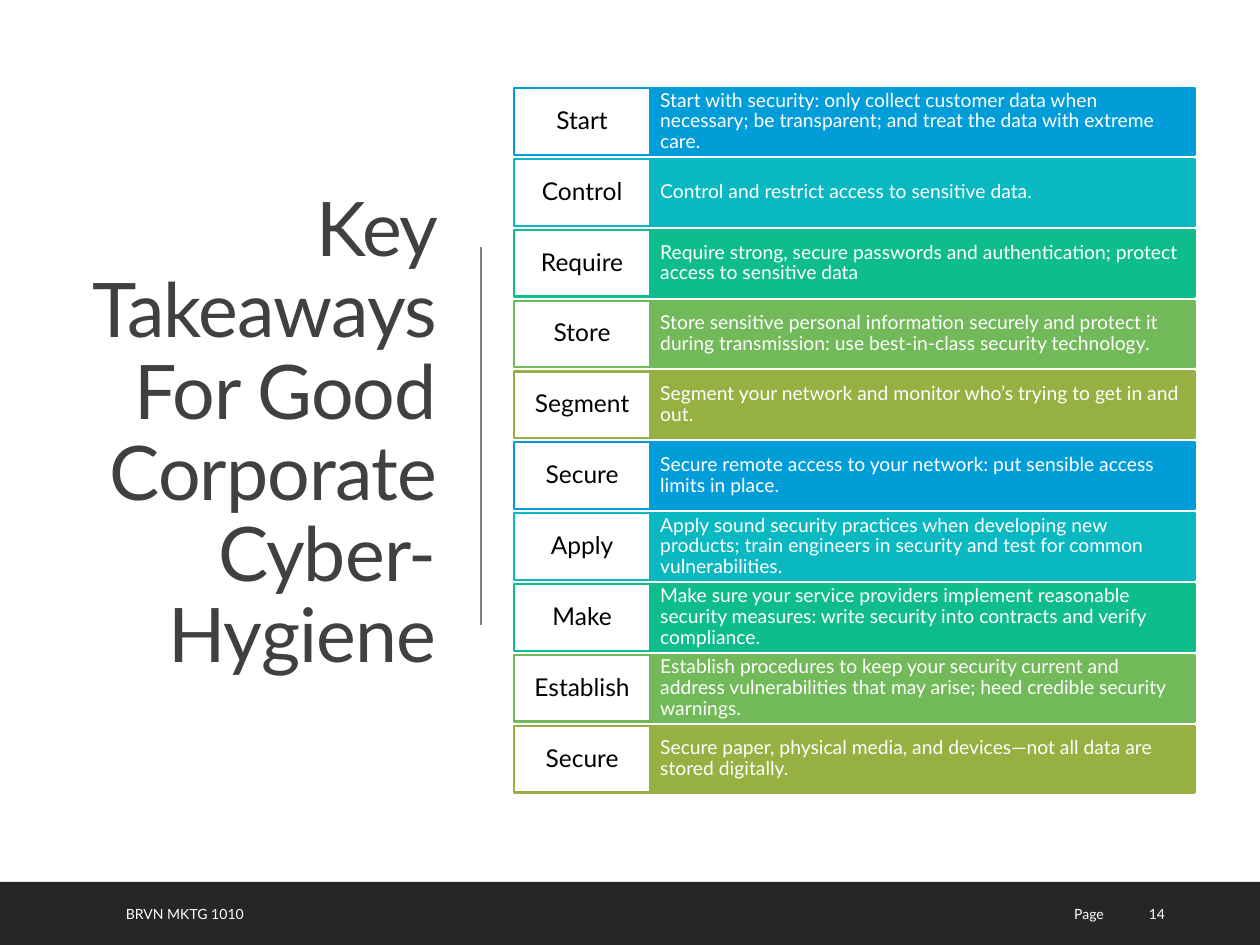
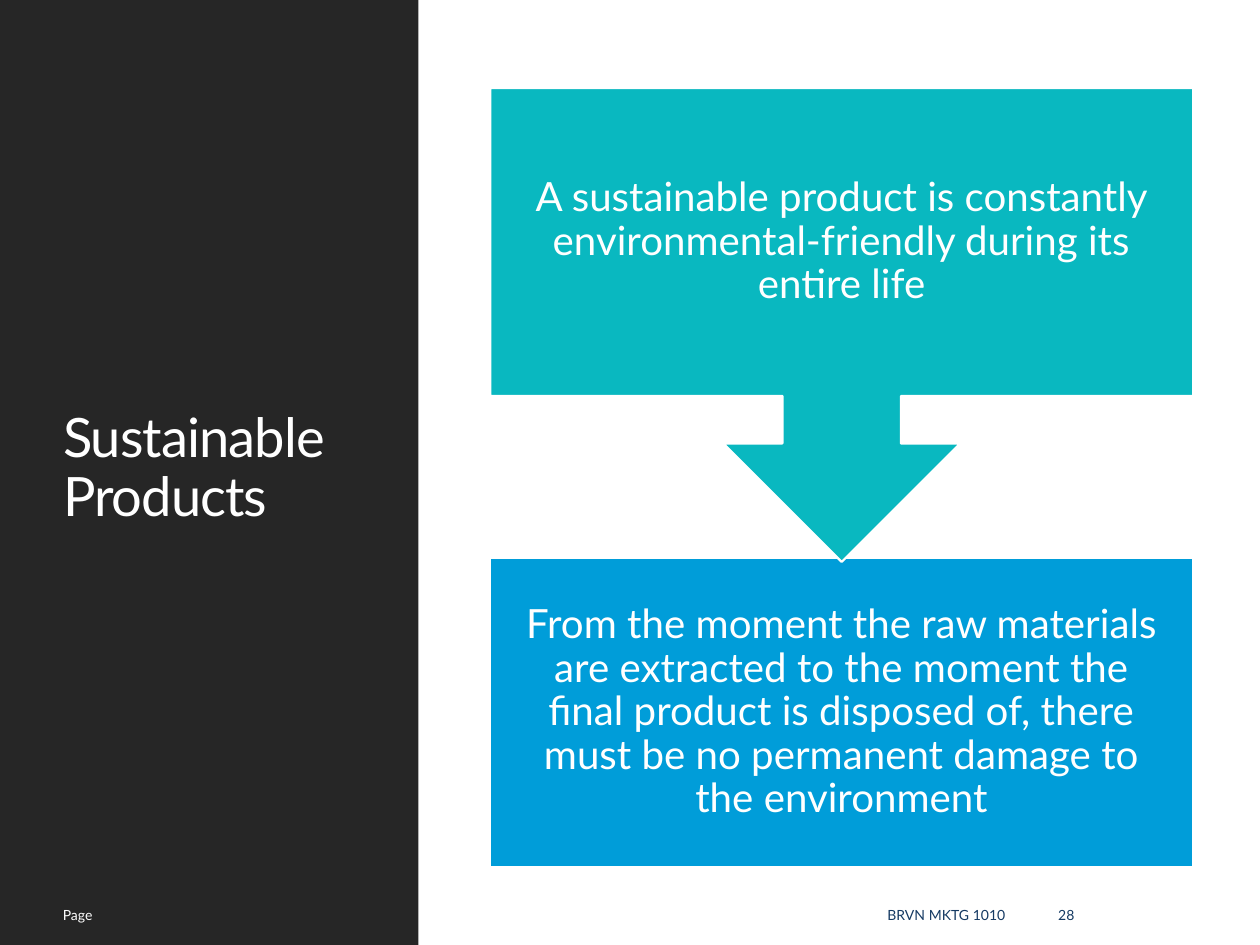
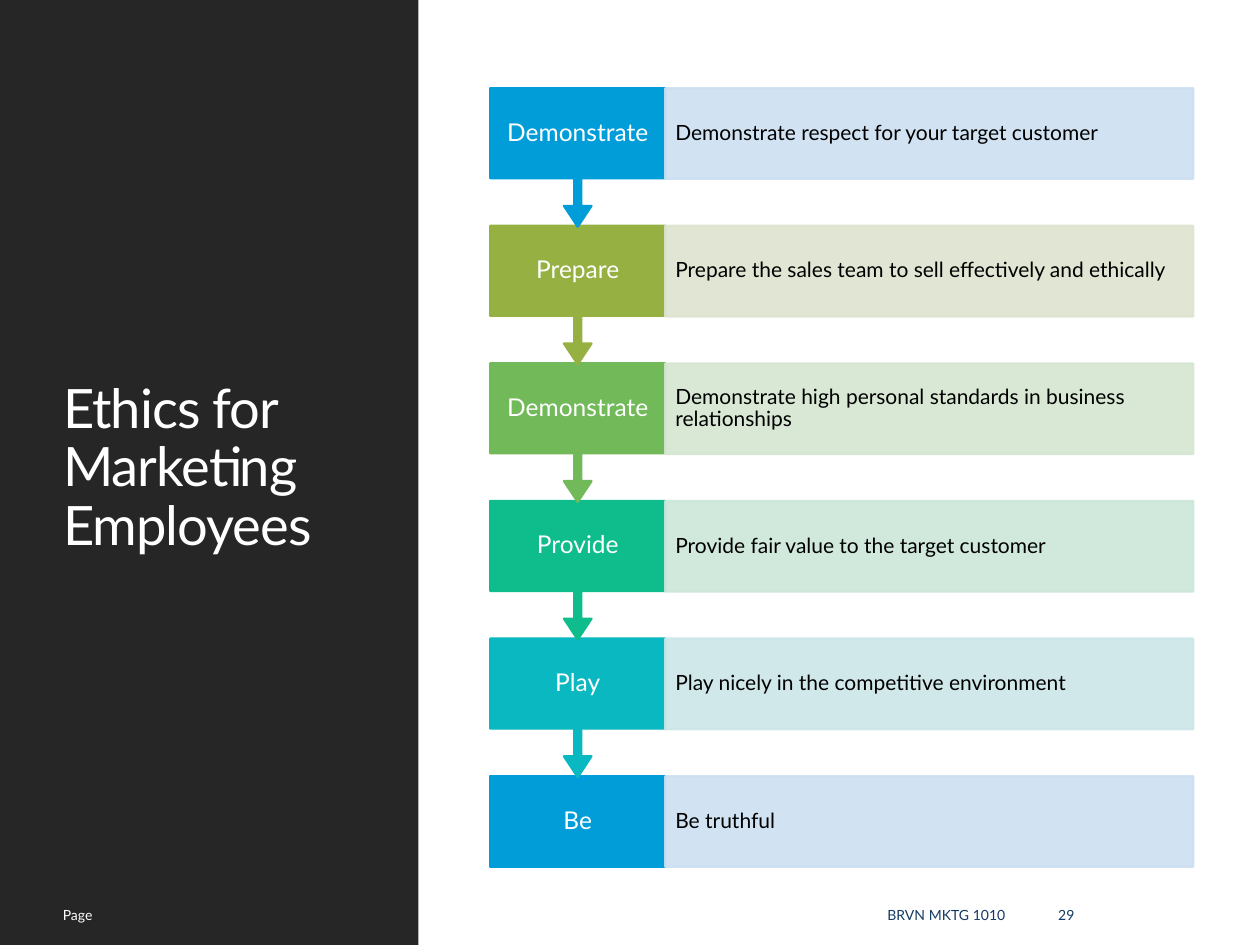
from collections import namedtuple

from lxml import etree
from pptx import Presentation
from pptx.dml.color import RGBColor
from pptx.enum import shapes, text
from pptx.oxml import ns
from pptx.util import Inches, Pt

FONT = "Lato"
COURSE = "BRVN MKTG 1010"

WHITE = RGBColor(0xFF, 0xFF, 0xFF)
BLACK = RGBColor(0x00, 0x00, 0x00)
CHARCOAL = RGBColor(0x26, 0x26, 0x26)
TITLE_GRAY = RGBColor(0x40, 0x40, 0x40)
RULE_GRAY = RGBColor(0x80, 0x80, 0x80)
NAVY = RGBColor(0x15, 0x3A, 0x63)
BLUE = RGBColor(0x00, 0x9D, 0xD9)
TEAL = RGBColor(0x09, 0xB8, 0xC0)
GREEN = RGBColor(0x0E, 0xBC, 0x8C)
LEAF = RGBColor(0x71, 0xB9, 0x59)
OLIVE = RGBColor(0x96, 0xB0, 0x42)

ACCENTS = [BLUE, TEAL, GREEN, LEAF, OLIVE]
TINTS = {
    BLUE: RGBColor(0xCC, 0xDF, 0xF1),
    TEAL: RGBColor(0xCC, 0xE6, 0xE8),
    GREEN: RGBColor(0xCC, 0xE7, 0xDA),
    LEAF: RGBColor(0xD5, 0xE6, 0xD1),
    OLIVE: RGBColor(0xDD, 0xE4, 0xCF),
}

LEFT, CENTER, RIGHT = text.PP_ALIGN.LEFT, text.PP_ALIGN.CENTER, text.PP_ALIGN.RIGHT
RECT = shapes.MSO_SHAPE.RECTANGLE
CALLOUT = shapes.MSO_SHAPE.DOWN_ARROW_CALLOUT

Box = namedtuple("Box", "left top width height")

TAKEAWAYS = [
    ("Start", "Start with security: only collect customer data when necessary; "
              "be transparent; and treat the data with extreme care."),
    ("Control", "Control and restrict access to sensitive data."),
    ("Require", "Require strong, secure passwords and authentication; "
                "protect access to sensitive data"),
    ("Store", "Store sensitive personal information securely and protect it during "
              "transmission: use best-in-class security technology."),
    ("Segment", "Segment your network and monitor who’s trying to get in and out."),
    ("Secure", "Secure remote access to your network: put sensible access limits in place."),
    ("Apply", "Apply sound security practices when developing new products; "
              "train engineers in security and test for common vulnerabilities."),
    ("Make", "Make sure your service providers implement reasonable security measures: "
             "write security into contracts and verify compliance."),
    ("Establish", "Establish procedures to keep your security current and address "
                  "vulnerabilities that may arise; heed credible security warnings."),
    ("Secure", "Secure paper, physical media, and devices—not all data are stored digitally."),
]

SUSTAINABLE = [
    "A sustainable product is constantly environmental-friendly during its entire life",
    "From the moment the raw materials are extracted to the moment the final product "
    "is disposed of, there must be no permanent damage to the environment",
]

ETHICS = [
    ("Demonstrate", "Demonstrate respect for your target customer", BLUE),
    ("Prepare", "Prepare the sales team to sell effectively and ethically", OLIVE),
    ("Demonstrate", "Demonstrate high personal standards in business relationships", LEAF),
    ("Provide", "Provide fair value to the target customer", GREEN),
    ("Play", "Play nicely in the competitive environment", TEAL),
    ("Be", "Be truthful", BLUE),
]


def inches(box):
    return [Inches(length) for length in box]


def write(shape, words, size, color, align=LEFT, spacing=0.9, insets=(0.1, 0.05)):
    """Fill a shape with one formatted paragraph and return its run."""
    frame = shape.text_frame
    across, down = inches(insets)
    frame_format = {
        "word_wrap": True, "auto_size": text.MSO_AUTO_SIZE.NONE,
        "vertical_anchor": text.MSO_ANCHOR.MIDDLE,
        "margin_left": across, "margin_right": across,
        "margin_top": down, "margin_bottom": down,
    }
    for name, value in frame_format.items():
        setattr(frame, name, value)
    para = frame.paragraphs[0]
    para.alignment, para.line_spacing = align, spacing
    span = para.add_run()
    span.text = words
    for name, value in {"name": FONT, "size": Pt(size)}.items():
        setattr(span.font, name, value)
    span.font.color.rgb = color
    return span


def add_block(page, box, fill, line=None, kind=RECT):
    block = page.shapes.add_shape(kind, *inches(box))
    block.shadow.inherit = False
    block.fill.solid()
    block.fill.fore_color.rgb = fill
    if line is None:
        block.line.fill.background()
    else:
        block.line.color.rgb = line
        block.line.width = Pt(1.25)
    return block


def set_opacity(block, percent):
    """Apply an opacity to both the fill and the outline."""
    for color in block.element.spPr.iter(ns.qn("a:srgbClr")):
        etree.SubElement(color, ns.qn("a:alpha"), val=str(percent * 1000))


def add_band(page, box):
    """Draw a dark band behind everything else on the page."""
    band = add_block(page, box, CHARCOAL)
    page.shapes.element.insert(2, band.element)


def add_title(page, words, box, size, color, align=LEFT):
    title = page.shapes.title
    title.left, title.top, title.width, title.height = inches(box)
    write(title, words, size, color, align)
    for properties in title.element.iter(ns.qn("a:rPr")):
        properties.set("spc", "-50")


def add_footer(page, entries):
    for words, box, color, align in entries:
        write(page.shapes.add_textbox(*inches(box)), words, 8, color, align, 1)


def new_page(deck):
    return deck.slides.add_slide(deck.slide_layouts[5])


def add_side_panel_page(deck, title, number):
    page = new_page(deck)
    add_band(page, Box(0, 0, 3.32, 7.5))
    add_title(page, title, Box(0.4, 0.57, 2.53, 6.31), 31, WHITE)
    add_footer(page, [
        ("Page", Box(0.4, 7.06, 1.42, 0.4), WHITE, LEFT),
        (COURSE, Box(3.89, 7.06, 4.19, 0.4), NAVY, RIGHT),
        (number, Box(8.3, 7.06, 0.89, 0.4), NAVY, LEFT),
    ])
    return page


def add_takeaway_rows(page, box, rows):
    label_width, row_height = 1.08, 0.53
    pitch = (box.height - row_height) / (len(rows) - 1)
    for index, (label, detail) in enumerate(rows):
        color = ACCENTS[index % len(ACCENTS)]
        top = box.top + index * pitch
        detail_box = Box(box.left + label_width, top, box.width - label_width, row_height)
        label_box = Box(box.left, top, label_width, row_height)
        write(add_block(page, detail_box, color, color), detail, 11, WHITE,
              insets=(0.08, 0.13))
        write(add_block(page, label_box, WHITE, color), label, 14, BLACK, CENTER,
              insets=(0.06, 0.05))


def add_cause_and_result(page, box, cause, result):
    """Stack a callout above a plain block, its arrow tip touching the block."""
    block_height, callout_height = 2.45, 3.76
    result_box = Box(box.left, box.top + box.height - block_height, box.width, block_height)
    callout_box = Box(box.left, box.top, box.width, callout_height)
    for words, place, fill, kind in ((result, result_box, BLUE, RECT),
                                     (cause, callout_box, TEAL, CALLOUT)):
        block = add_block(page, place, fill, WHITE, kind)
        write(block, words, 23, WHITE, CENTER, insets=(0.18, 0.18))


def add_step_chain(page, box, steps):
    """Stack labelled steps from the last to the first, so arrows lie on top."""
    label_width, step_height, callout_height = 1.39, 0.72, 1.1
    last = len(steps) - 1
    pitch = (box.height - step_height) / last
    for index, (label, detail, color) in reversed(list(enumerate(steps))):
        top = box.top + index * pitch
        kind, height = (RECT, step_height) if index == last else (CALLOUT, callout_height)
        step = add_block(page, Box(box.left, top, label_width, height), color, color, kind)
        if kind == CALLOUT:
            for position, value in enumerate((0.05, 0.1, 0.15, 0.65)):
                step.adjustments[position] = value
        write(step, label, 14, WHITE, CENTER, insets=(0.1, 0.11))
        detail_box = Box(box.left + label_width, top, box.width - label_width, step_height)
        panel = add_block(page, detail_box, TINTS[color], TINTS[color])
        set_opacity(panel, 90)
        write(panel, detail, 12, BLACK, insets=(0.08, 0.17))


def add_rule(page, left, top, bottom):
    rule = page.shapes.add_connector(shapes.MSO_CONNECTOR.STRAIGHT,
                                     *inches((left, top, left, bottom)))
    rule.line.color.rgb = RULE_GRAY
    rule.line.width = Pt(1)
    etree.SubElement(rule.element.spPr, ns.qn("a:effectLst"))


def build_takeaways(deck):
    page = new_page(deck)
    add_band(page, Box(0, 7, 10, 0.5))
    add_title(page, "Key Takeaways For Good Corporate Cyber-Hygiene",
              Box(0.53, 0.69, 3.03, 5.53), 43, TITLE_GRAY, RIGHT)
    add_rule(page, 3.82, 1.96, 4.96)
    add_footer(page, [
        (COURSE, Box(0.9, 7.05, 5.59, 0.4), WHITE, LEFT),
        ("Page", Box(6.74, 7.05, 2.12, 0.4), WHITE, RIGHT),
        ("14", Box(9.02, 7.05, 0.64, 0.4), WHITE, LEFT),
    ])
    add_takeaway_rows(page, Box(4.08, 0.7, 5.4, 5.59), TAKEAWAYS)


def main():
    deck = Presentation()
    deck.slide_width, deck.slide_height = Inches(10), Inches(7.5)
    build_takeaways(deck)
    content = Box(3.89, 0.7, 5.58, 6.18)
    page = add_side_panel_page(deck, "Sustainable Products", "28")
    add_cause_and_result(page, content, *SUSTAINABLE)
    page = add_side_panel_page(deck, "Ethics for Marketing Employees", "29")
    add_step_chain(page, content, ETHICS)
    deck.save("out.pptx")


if __name__ == "__main__":
    main()
